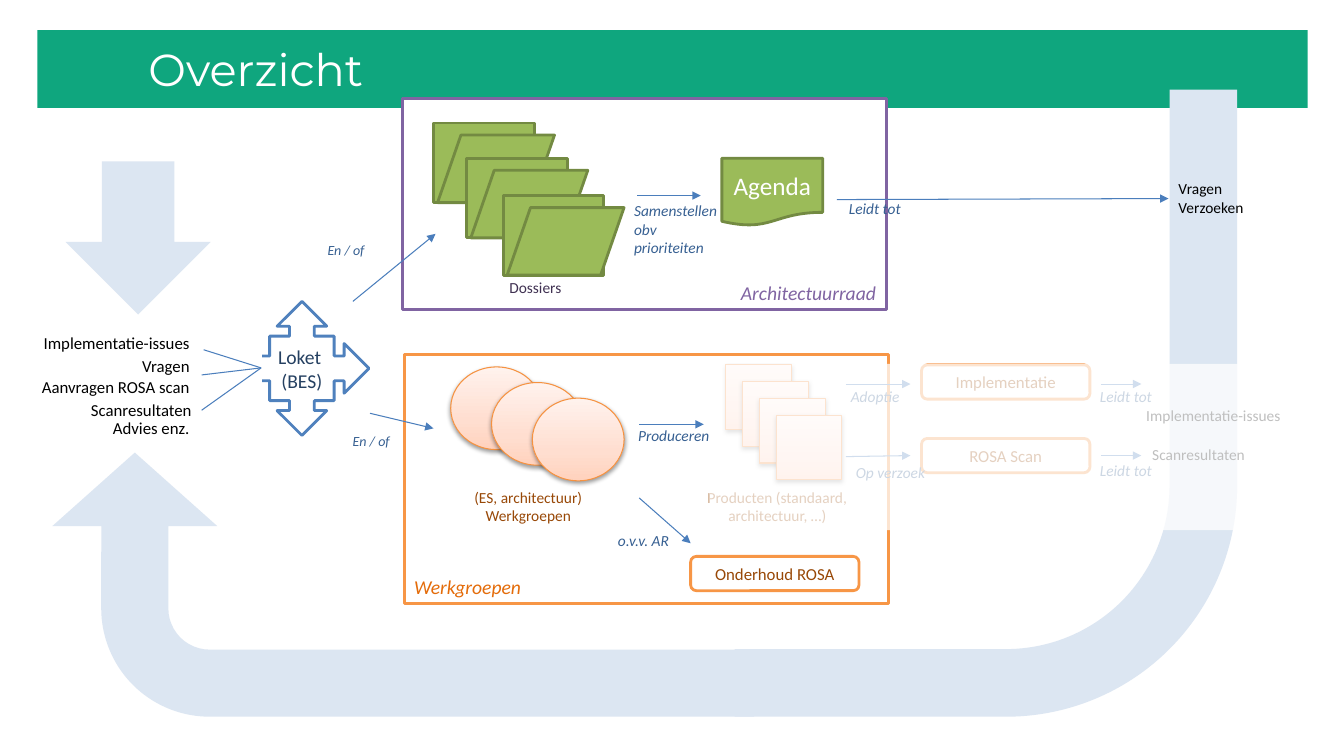
from lxml.etree import SubElement
from pptx import Presentation
from pptx.dml.color import RGBColor
from pptx.enum.shapes import MSO_CONNECTOR, MSO_SHAPE as Kind
from pptx.enum.text import MSO_ANCHOR, MSO_AUTO_SIZE, PP_ALIGN
from pptx.oxml import parse_xml
from pptx.oxml.ns import nsdecls, qn
from pptx.util import Cm, Pt

LEFT, MID, RIGHT = PP_ALIGN.LEFT, PP_ALIGN.CENTER, PP_ALIGN.RIGHT
WHITE, BLACK, PALE = "FFFFFF", "000000", "DCE6F2"
GREEN, OLIVE, ORANGE = "9BBB59", "738A42", "F79646"
PURPLE, BROWN, BLUE, STEEL = "8064A2", "984807", "376092", "4B7EBC"
TITLE = "Overzicht"
BANDS = [
    (Kind.BENT_ARROW, (6.68, 0.89, 5.59, 6.22), 180, (0.12, 0.06, 0.11, 0.41)),
    (Kind.BENT_ARROW, (2.69, 2.32, 2.62, 6.96), 270, (0.254, 0.312, 0.278, 0.41)),
    (Kind.UP_ARROW, (0.65, 1.6, 1.44, 1.52), 180, ()),
]
PANELS = [
    ("Werkgroepen", (4.01, 3.52, 4.8, 2.47), ORANGE, "E46C0A", LEFT),
    ("Architectuurraad", (3.99, 0.98, 4.8, 2.09), PURPLE, PURPLE, RIGHT),
]
FILES = [(4.3, 1.22), (4.63, 1.57), (4.99, 1.94)]
STACKS = [
    (Kind.OVAL, (4.47, 3.64, 0.91, 0.82), 3, (0.405, 0.155)),
    (Kind.RECTANGLE, (7.2, 3.62, 0.65, 0.64), 4, (0.167, 0.167)),
]
STOPS = [(0, "FFD2BD"), (35, "FFDED0"), (100, "FFF2ED")]
PILLS = [
    ("Implementatie", 9.14, 3.62),
    ("ROSA Scan", 9.14, 4.35),
    ("Onderhoud ROSA", 6.85, 5.52),
]
ISSUES = [
    ("Implementatie-issues", (0.06, 3.25, 1.92, 0.3), True),
    ("Vragen", (1.3, 3.48, 0.68, 0.3), False),
    ("Aanvragen ROSA scan", (0.3, 3.69, 1.68, 0.3), False),
    ("Scanresultaten", (0.79, 3.92, 1.21, 0.3), False),
    ("Advies enz.", (1.01, 4.1, 0.97, 0.3), False),
]
NAMES = [
    ("Dossiers", (4.35, 2.71, 1.92, 0.29), "403152"),
    ("(ES, architectuur) Werkgroepen", (4.28, 4.79, 1.92, 0.47), BROWN),
    ("Producten (standaard, architectuur, …)", (6.75, 4.79, 1.92, 0.47), BROWN),
]
RESULTS = [
    ("Implementatie-issues", (11.27, 3.98, 1.92, 0.29), True),
    ("Scanresultaten", (11.33, 4.37, 1.17, 0.29), False),
    ("Vragen\nVerzoeken", (11.59, 1.73, 0.87, 0.47), False),
]
STEPS = [
    ("Samenstellen obv prioriteiten", 6.19, 1.95, 0.66, 11),
    ("Leidt tot", 8.32, 1.93, 0.29, 11),
    ("Produceren", 6.23, 4.18, 0.29, 11),
    ("o.v.v. AR", 6.03, 5.22, 0.29, 11),
    ("Op verzoek", 8.39, 4.54, 0.29, 11),
    ("Adoptie", 8.34, 3.79, 0.29, 11),
    ("Leidt tot", 10.81, 3.79, 0.29, 11),
    ("Leidt tot", 10.81, 4.53, 0.29, 11),
    ("En / of", 3.15, 2.35, 0.27, 10),
    ("En / of", 3.4, 4.24, 0.27, 10),
]
INPUTS = [(2.02, 3.47), (2, 3.72), (2, 4.07)]
DESK = (2.59, 3.65)
ARROWS = [
    (3.5, 2.99, 4.32, 2.32), (3.67, 4.1, 4.3, 4.25),
    (6.32, 1.94, 6.95, 1.94), (6.34, 4.21, 6.98, 4.21),
    (8.3, 1.98, 11.59, 1.97), (8.39, 3.81, 9.03, 3.81),
    (8.39, 4.53, 9.03, 4.52), (10.92, 3.81, 11.32, 3.81),
    (10.92, 4.52, 11.32, 4.52), (6.34, 4.94, 6.85, 5.39),
]


def inch(*nums):
    return [Cm(2.54 * n) for n in nums]


def tint(code):
    return RGBColor.from_string(code)


def write(item, text, size, color, align=LEFT, slant=False, face="Calibri"):
    frame = item.text_frame
    frame.text = text
    for para in frame.paragraphs:
        para.alignment = align
        for run in para.runs:
            font = run.font
            font.name, font.size, font.italic = face, Pt(size), slant
            font.color.rgb = tint(color)
    return frame


def draw(kind, place, fill, edge=None, width=2):
    item = slide.shapes.add_shape(kind, *inch(*place))
    item.shadow.inherit = False
    item.fill.solid()
    item.fill.fore_color.rgb = tint(fill)
    if edge:
        item.line.color.rgb = tint(edge)
        item.line.width = Pt(width)
    else:
        item.line.fill.background()
    return item


def label(text, place, size, color, align=LEFT, slant=False, wrap=True):
    box = slide.shapes.add_textbox(*inch(*place))
    frame = write(box, text, size, color, align, slant)
    frame.word_wrap = wrap
    frame.auto_size = MSO_AUTO_SIZE.SHAPE_TO_FIT_TEXT


def link(ends, arrow):
    line = slide.shapes.add_connector(MSO_CONNECTOR.STRAIGHT, *inch(*ends))
    line.line.color.rgb = tint(STEEL)
    line.line.width = Pt(0.75)
    props = line._element.spPr
    if arrow:
        SubElement(props.find(qn("a:ln")), qn("a:tailEnd"), type="triangle")
    SubElement(props, qn("a:effectLst"))


def glow(item):
    props = item._element.spPr
    stops = "".join(
        f'<a:gs pos="{pos * 1000}"><a:srgbClr val="{code}"/></a:gs>' for pos, code in STOPS)
    grad = parse_xml(
        f'<a:gradFill {nsdecls("a")} rotWithShape="1"><a:gsLst>{stops}</a:gsLst>'
        '<a:lin ang="16200000" scaled="1"/></a:gradFill>')
    props.replace(props.find(qn("a:solidFill")), grad)
    shade = SubElement(props.find(qn("a:effectLst")), qn("a:outerShdw"), blurRad="40000",
                       dist="20000", dir="5400000", rotWithShape="0")
    color = SubElement(shade, qn("a:srgbClr"), val=BLACK)
    SubElement(color, qn("a:alpha"), val="38000")


deck = Presentation()
deck.slide_width, deck.slide_height = inch(13.33, 7.5)
slide = deck.slides.add_slide(deck.slide_layouts[5])

head = slide.shapes.title
head.left, head.top, head.width, head.height = inch(0.37, 0.3, 12.6, 0.77)
head.fill.solid()
head.fill.fore_color.rgb = tint("0FA67E")
frame = write(head, TITLE, 32, WHITE, face="Montserrat")
frame.auto_size = MSO_AUTO_SIZE.NONE
frame.vertical_anchor = MSO_ANCHOR.MIDDLE
frame.margin_left = Cm(2.8)

for kind, place, turn, bends in BANDS:
    band = draw(kind, place, PALE)
    band.rotation = turn
    for spot, bend in enumerate(bends):
        band.adjustments[spot] = bend

for text, place, edge, color, align in PANELS:
    panel = draw(Kind.RECTANGLE, place, WHITE, edge)
    write(panel, text, 14, color, align, True).vertical_anchor = MSO_ANCHOR.BOTTOM

for x, y in FILES:
    draw(Kind.RECTANGLE, (x, y, 1, 0.79), GREEN, OLIVE)
    draw(Kind.FLOWCHART_DATA, (x + 0.04, y + 0.12, 1.16, 0.67), GREEN, OLIVE)

desk = draw(Kind.QUAD_ARROW_CALLOUT, (2.33, 2.99, 1.33, 1.33), WHITE, "4F81BD")
write(desk, "Loket \n(BES)", 14, "254061", MID).word_wrap = False
draw(Kind.RECTANGLE, (2.33, 3.4, 0.26, 0.51), WHITE, WHITE)
for start in INPUTS:
    link(start + DESK, False)
for text, place, wrap in ISSUES:
    label(text, place, 12, BLACK, RIGHT, wrap=wrap)

for kind, (x, y, wide, high), count, (dx, dy) in STACKS:
    for n in range(count):
        glow(draw(kind, (x + n * dx, y + n * dy, wide, high), WHITE, "F69240", 0.75))

agenda = draw(Kind.FLOWCHART_DOCUMENT, (7.16, 1.57, 1, 0.67), GREEN, OLIVE)
write(agenda, "Agenda", 18, WHITE, MID)
for text, x, y in PILLS:
    pill = draw(Kind.ROUNDED_RECTANGLE, (x, y, 1.67, 0.34), WHITE, ORANGE)
    write(pill, text, 12, BROWN, MID)
for text, place, color in NAMES:
    label(text, place, 11, color, MID)
for text, place, wrap in RESULTS:
    label(text, place, 11, BLACK, wrap=wrap)
for ends in ARROWS:
    link(ends, True)
for text, x, y, high, size in STEPS:
    label(text, (x, y, 1.08, high), size, BLUE, slant=True)

veil = draw(Kind.RECTANGLE, (7.03, 3.61, 5.75, 1.65), WHITE)
color = veil._element.spPr.find(qn("a:solidFill"))[0]
SubElement(color, qn("a:alpha"), val="75000")

deck.save("out.pptx")
